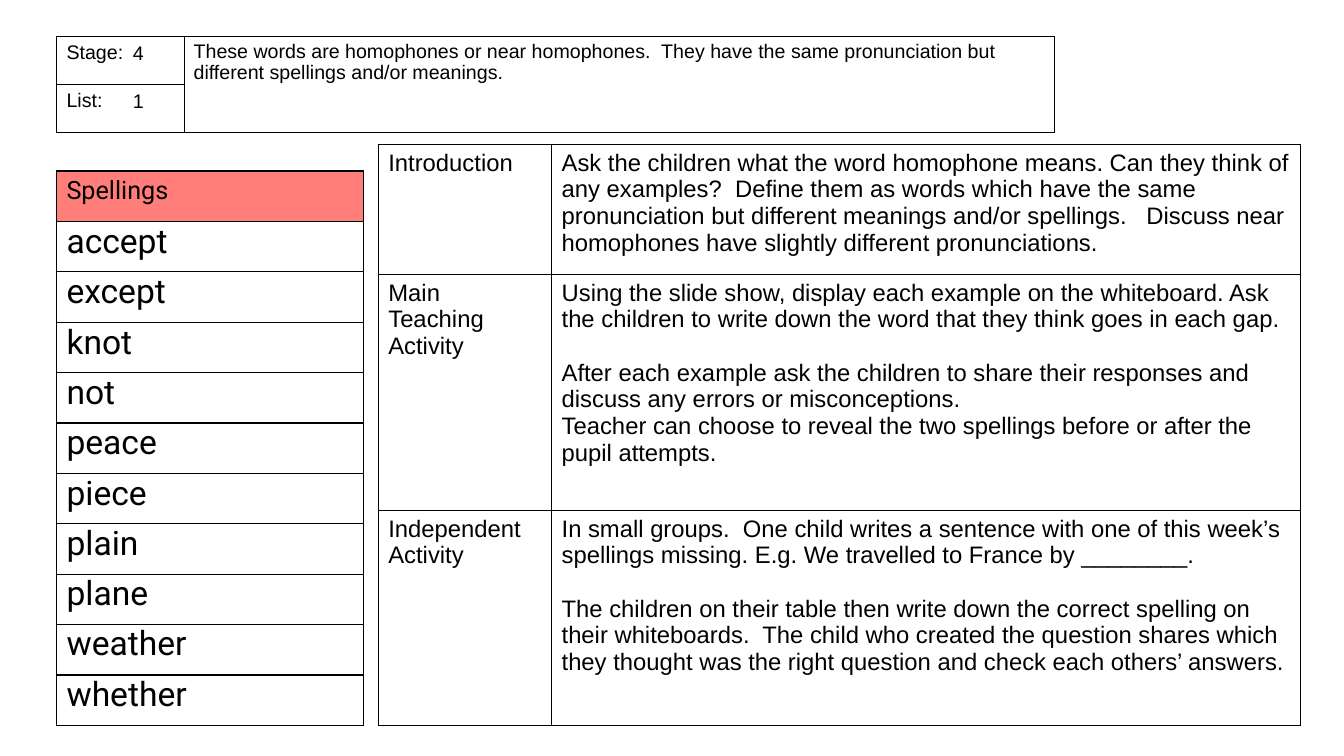
from lxml import etree
from pptx import Presentation
from pptx import util as u
from pptx.dml.color import RGBColor
from pptx.enum import text
from pptx.oxml.ns import qn

BLACK, CORAL = "000000", "FF7E79"
WORDS = ["accept", "except", "knot", "not", "peace",
         "piece", "plain", "plane", "weather", "whether"]
RULE = ("These words are homophones or near homophones.  They have the same "
        "pronunciation but different spellings and/or meanings.")
PLAN = [
    ("Introduction", [
        "Ask the children what the word homophone means. Can they think of any "
        "examples?  Define them as words which have the same pronunciation but "
        "different meanings and/or spellings.   Discuss near homophones have "
        "slightly different pronunciations."]),
    ("Main Teaching Activity", [
        "Using the slide show, display each example on the whiteboard. Ask the "
        "children to write down the word that they think goes in each gap.",
        "After each example ask the children to share their responses and "
        "discuss any errors or misconceptions.",
        "Teacher can choose to reveal the two spellings before or after the "
        "pupil attempts."]),
    ("Independent Activity", [
        "In small groups.  One child writes a sentence with one of this week’s "
        "spellings missing. E.g. We travelled to France by ________.",
        "The children on their table then write down the correct spelling on "
        "their whiteboards.  The child who created the question shares which "
        "they thought was the right question and check each others’ answers."]),
]


def color(value):
    """Return the colour for a hex string."""
    return RGBColor.from_string(value)


def apply(target, values):
    """Set each attribute named in values on the target."""
    for name, value in values.items():
        setattr(target, name, value)


def write(paragraph, content, size, font="Arial"):
    """Write one formatted run into a paragraph."""
    run = paragraph.add_run()
    run.text = content
    apply(run.font, {"name": font, "size": u.Pt(size), "bold": False})
    run.font.color.rgb = color(BLACK)


def add_borders(cell):
    """Draw a thin black line on each side of a cell."""
    properties = cell._tc.get_or_add_tcPr()
    for position, side in enumerate(("a:lnL", "a:lnR", "a:lnT", "a:lnB")):
        line = etree.Element(qn(side), w=str(u.Pt(1)))
        fill = etree.SubElement(line, qn("a:solidFill"))
        etree.SubElement(fill, qn("a:srgbClr"), val=BLACK)
        properties.insert(position, line)


def add_grid(slide, left, top, widths, heights):
    """Add an unfilled bordered table and return it."""
    frame = slide.shapes.add_table(
        len(heights), len(widths), u.Pt(left), u.Pt(top),
        u.Pt(sum(widths)), u.Pt(sum(heights)))
    table = frame.table
    apply(table, {"first_row": False, "horz_banding": False})
    for column, width in zip(table.columns, widths):
        column.width = u.Pt(width)
    for row, height in zip(table.rows, heights):
        row.height = u.Pt(height)
    for cell in table.iter_cells():
        cell.fill.background()
        add_borders(cell)
    return table


def fill_body(slide, index, box, lines, size, font="Arial"):
    """Move a body placeholder to the box and write its lines."""
    shape = slide.placeholders[index]
    apply(shape, dict(zip(("left", "top", "width", "height"), map(u.Pt, box))))
    frame = shape.text_frame
    apply(frame, {"word_wrap": True, "auto_size": text.MSO_AUTO_SIZE.NONE,
                  "vertical_anchor": text.MSO_ANCHOR.TOP})
    for number, line in enumerate(lines):
        paragraph = frame.add_paragraph() if number else frame.paragraphs[0]
        properties = paragraph._p.get_or_add_pPr()
        properties.set("marL", "0")
        properties.set("indent", "0")
        etree.SubElement(properties, qn("a:buNone"))
        apply(paragraph, {"line_spacing": 0.9,
                          "space_before": u.Pt(10 if number else 0)})
        write(paragraph, line, size, font)


def add_heading(slide, left, top):
    """Add the stage, list number and spelling rule."""
    label_width, rule_width, height = 91.4, 621.6, 34.2
    table = add_grid(slide, left, top, [label_width, rule_width], [height] * 2)
    table.cell(0, 1).merge(table.cell(1, 1))
    for row, (label, value) in enumerate([("Stage:", "4"), ("List:", "1")]):
        write(table.cell(row, 0).text_frame.paragraphs[0], label, 14)
        box = (left + 47.5, top + 1.4 + row * height, 34, 29)
        fill_body(slide, row + 1, box, [value], 14)
    box = (left + label_width - 0.6, top, rule_width, 2 * height)
    fill_body(slide, 3, box, [RULE], 14)


def add_spellings(slide, left, top):
    """Add the headed grid of spelling words."""
    width, height = 219.6, 36
    table = add_grid(slide, left, top, [width], [height] * (len(WORDS) + 1))
    header = table.cell(0, 0)
    header.fill.solid()
    header.fill.fore_color.rgb = color(CORAL)
    write(header.text_frame.paragraphs[0], "Spellings", 18, "Roboto")
    box = (left, top + height - 1.4, width, height * len(WORDS))
    fill_body(slide, 4, box, WORDS, 24, "Roboto")


def add_plan(slide, left, top):
    """Add the table of lesson activities."""
    table = add_grid(slide, left, top, [123.8, 535], [92.9, 168.5, 153.5])
    for row, (activity, steps) in enumerate(PLAN):
        write(table.cell(row, 0).text_frame.paragraphs[0], activity, 17)
        frame = table.cell(row, 1).text_frame
        for number, step in enumerate(steps):
            paragraph = frame.add_paragraph() if number else frame.paragraphs[0]
            paragraph.space_before = u.Pt(19 if number == 1 else 0)
            write(paragraph, step, 17)


def main():
    """Build and save the lesson slide."""
    presentation = Presentation()
    apply(presentation, {"slide_width": u.Pt(960), "slide_height": u.Pt(540)})
    slide = presentation.slides.add_slide(presentation.slide_layouts[4])
    title = slide.shapes.title
    title.element.getparent().remove(title.element)
    add_heading(slide, 40.3, 26)
    add_spellings(slide, 40.3, 122.2)
    add_plan(slide, 270.2, 103.2)
    presentation.save("out.pptx")


if __name__ == "__main__":
    main()
